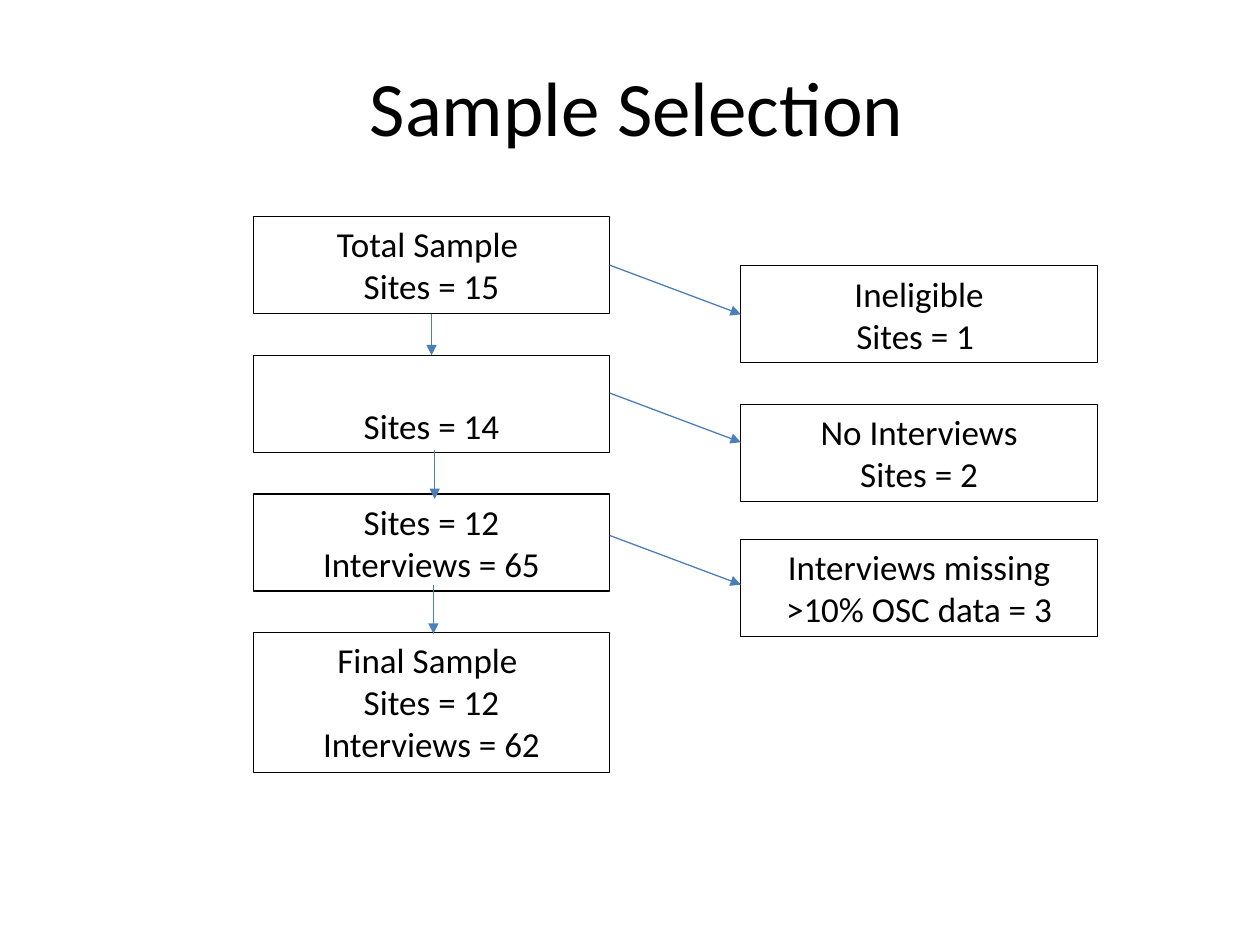
from pptx import Presentation
from pptx import util as u
from pptx.dml.color import RGBColor
from pptx.enum import shapes, text
from pptx.oxml.ns import qn
from lxml import etree

FONT, INK, BLUE = "Calibri", "000000", "4B7EBC"
LEFT, RIGHT, WIDE, HIGH = 2.01, 5.88, 2.83, 0.77   # the two columns
TOP, STEP = 1.72, 1.1                              # rows of the main column
MID = LEFT + WIDE / 2
EDGE = LEFT + WIDE


def tint(code):
    return RGBColor.from_string(code)


def style(par, size):
    par.alignment = text.PP_ALIGN.CENTER
    par.font.size = u.Pt(size)
    par.font.name = FONT
    par.font.color.rgb = tint(INK)


def head(slide, box, words):
    title = slide.shapes.title
    title.left, title.top, title.width, title.height = map(u.Inches, box)
    title.text_frame.text = words
    title.text_frame.vertical_anchor = text.MSO_ANCHOR.MIDDLE
    style(title.text_frame.paragraphs[0], 44)


def card(slide, box, words, anchor=text.MSO_ANCHOR.TOP):
    rect = slide.shapes.add_shape(shapes.MSO_SHAPE.RECTANGLE, *map(u.Inches, box))
    rect.shadow.inherit = False
    rect.fill.background()
    rect.line.color.rgb = tint(INK)
    rect.line.width = u.Pt(0.75)
    frame = rect.text_frame
    frame.word_wrap = True
    frame.vertical_anchor = anchor
    frame.text = words
    for par in frame.paragraphs:
        style(par, 20)
    return rect


def arrow(slide, start, end):
    line = slide.shapes.add_connector(
        shapes.MSO_CONNECTOR.STRAIGHT, *map(u.Inches, (*start, *end)))
    line.line.color.rgb = tint(BLUE)
    line.line.width = u.Pt(0.75)
    # Arrowhead, and no shadow
    etree.SubElement(line.line._get_or_add_ln(), qn("a:tailEnd"), type="triangle")
    etree.SubElement(line._element.spPr, qn("a:effectLst"))
    return line


def flow(slide):
    # Main column: what remains at each step
    low = text.MSO_ANCHOR.BOTTOM
    steps = [("Total Sample \nSites = 15", HIGH, text.MSO_ANCHOR.TOP),
             ("Sites = 14", HIGH, low),
             ("Sites = 12\nInterviews = 65", HIGH, text.MSO_ANCHOR.TOP),
             ("Final Sample \nSites = 12\nInterviews = 62", 1.11, text.MSO_ANCHOR.TOP)]
    kept = [card(slide, (LEFT, TOP + i * STEP, WIDE, tall), words, anchor)
            for i, (words, tall, anchor) in enumerate(steps)]

    # Side column: what is left out
    drops = [("Ineligible\nSites = 1 ", 2.11),
             ("No Interviews\nSites = 2", 3.21),
             ("Interviews missing >10% OSC data = 3", 4.28)]
    lost = [card(slide, (RIGHT, y, WIDE, HIGH), words) for words, y in drops]

    # Slanted arrows to the side column
    out = [arrow(slide, (EDGE, y), (RIGHT, y + 0.39)) for y in (2.11, 3.12, 4.25)]
    out[0].begin_connect(kept[0], 3)
    out[0].end_connect(lost[0], 1)

    # Arrows down the main column
    down = [arrow(slide, (x, y), (x, end)) for x, y, end in
            ((MID, 2.5, 2.82), (3.45, 3.57, 3.96), (3.44, 4.64, 5.03))]
    down[0].begin_connect(kept[0], 2)
    down[0].end_connect(kept[1], 0)


def main():
    deck = Presentation()
    deck.slide_width, deck.slide_height = u.Inches(10), u.Inches(7.5)
    slide = deck.slides.add_slide(deck.slide_layouts[5])
    head(slide, (0.58, 0.43, 8.95, 0.82), "Sample Selection")
    flow(slide)
    deck.save("out.pptx")


if __name__ == "__main__":
    main()
